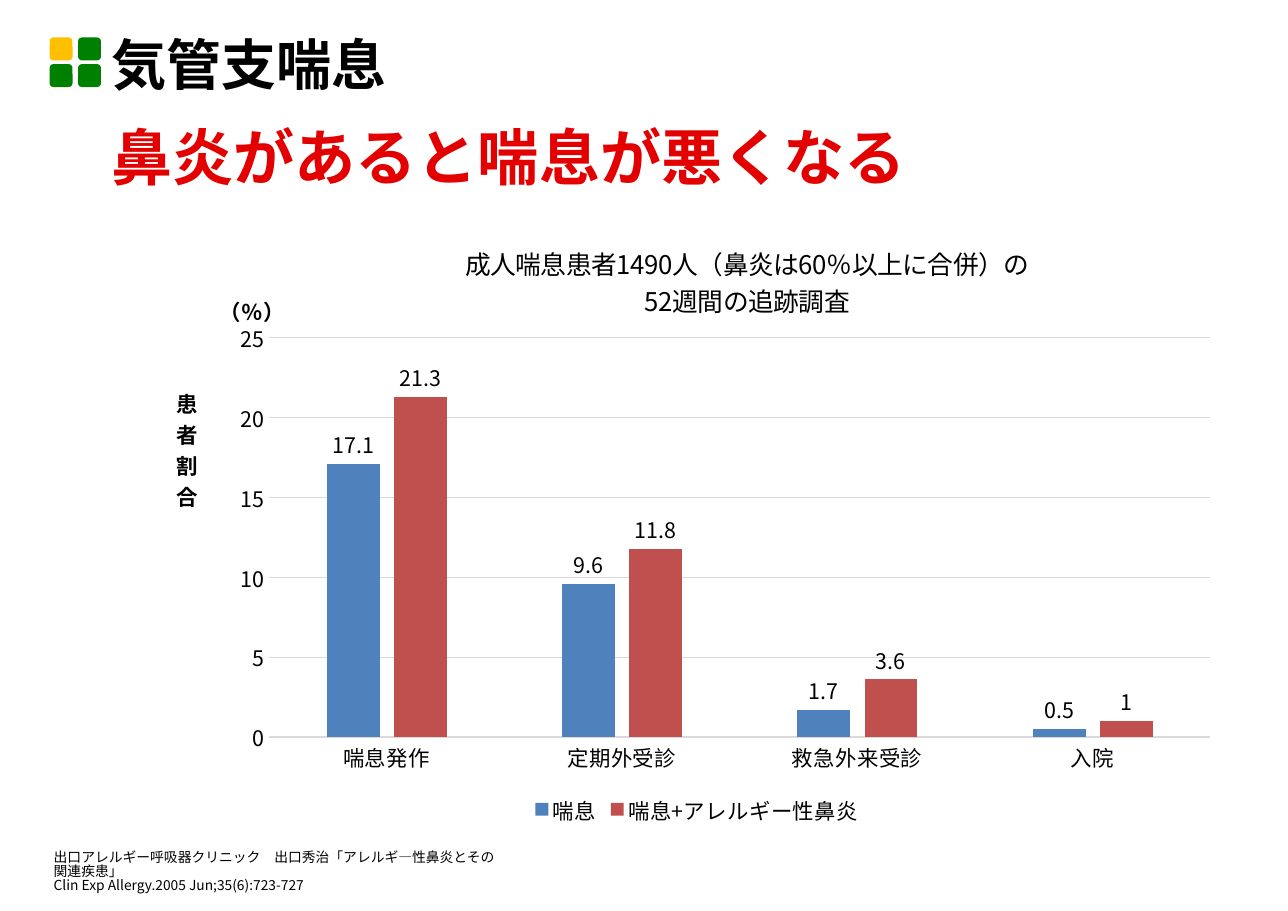
from lxml.etree import SubElement
from pptx import Presentation
from pptx.chart.data import CategoryChartData
from pptx.dml.color import RGBColor
from pptx.enum.chart import XL_CHART_TYPE, XL_LABEL_POSITION, XL_LEGEND_POSITION, XL_TICK_MARK
from pptx.enum.shapes import MSO_SHAPE
from pptx.enum.text import MSO_ANCHOR
from pptx.oxml import parse_xml
from pptx.oxml.ns import nsdecls, qn
from pptx.util import Pt

BLACK = RGBColor(0x00, 0x00, 0x00)
RED = RGBColor(0xE2, 0x00, 0x00)
AMBER = RGBColor(0xFF, 0xC0, 0x00)
GREEN = RGBColor(0x00, 0x80, 0x00)
GRID_GREY = RGBColor(0xD9, 0xD9, 0xD9)
ASTHMA_BLUE = RGBColor(0x4F, 0x81, 0xBD)
RHINITIS_RED = RGBColor(0xC0, 0x50, 0x4D)
SANS = "Noto Sans CJK JP"
LATIN = "Calibri"

CATEGORIES = ["喘息発作", "定期外受診", "救急外来受診", "入院"]
SERIES = [
    ("喘息", (17.1, 9.6, 1.7, 0.5), ASTHMA_BLUE),
    ("喘息+アレルギー性鼻炎", (21.3, 11.8, 3.6, 1), RHINITIS_RED),
]
CHART_TITLE = "成人喘息患者1490人（鼻炎は60％以上に合併）の\n52週間の追跡調査"
SOURCES = (
    "出口アレルギー呼吸器クリニック\u3000出口秀治「アレルギ―性鼻炎とその関連疾患」\n"
    "Clin Exp Allergy.2005 Jun;35(6):723-727"
)


def style_text(frame, size, color=BLACK, bold=False, name=SANS):
    """Format every run, with the Japanese face set for East Asian text."""
    for para in frame.paragraphs:
        for span in para.runs:
            font = span.font
            font.size, font.bold, font.name = Pt(size), bold, name
            font.color.rgb = color
            SubElement(font._element, qn("a:ea"), typeface=SANS)


def add_text(page, box, text, size, spacing, anchor=MSO_ANCHOR.TOP, **style):
    frame = page.shapes.add_textbox(*map(Pt, box)).text_frame
    frame.word_wrap = True
    frame.vertical_anchor = anchor
    frame.text = text
    for para in frame.paragraphs:
        para.line_spacing = spacing
    style_text(frame, size, **style)


def add_tiles(page, box):
    """Four rounded tiles in a two by two grid, the first one amber."""
    left, top, width, height = box
    side = 15
    for index in range(4):
        row, column = divmod(index, 2)
        tile = page.shapes.add_shape(
            MSO_SHAPE.ROUNDED_RECTANGLE,
            Pt(left + column * (width - side)), Pt(top + row * (height - side)),
            Pt(side), Pt(side))
        tile.shadow.inherit = False
        tile.fill.solid()
        tile.fill.fore_color.rgb = GREEN if index else AMBER
        tile.line.fill.background()


def set_layout(element, position, **fractions):
    """Give a chart part a manual place, as fractions of the chart."""
    for old in element.findall(qn("c:layout")):
        element.remove(old)
    layout = parse_xml(f"<c:layout {nsdecls('c')}><c:manualLayout/></c:layout>")
    for tag, value in fractions.items():
        SubElement(layout[0], qn(f"c:{tag}"), val=str(value))
    element.insert(position, layout)


def place_title(title, text, size, left, top, bold=False):
    title.text_frame.text = text
    style_text(title.text_frame, size, bold=bold)
    set_layout(title.element, 1, xMode="edge", yMode="edge", x=left, y=top)


def format_axes(chart):
    category, value = chart.category_axis, chart.value_axis
    for axis in (category, value):
        axis.major_tick_mark = axis.minor_tick_mark = XL_TICK_MARK.NONE
    category.format.line.color.rgb = GRID_GREY
    category.format.line.width = Pt(0.78)
    value.minimum_scale, value.maximum_scale, value.major_unit = 0, 25, 5
    value.format.line.fill.background()
    grid = value.major_gridlines.format.line
    grid.color.rgb = GRID_GREY
    grid.width = Pt(0.78)
    place_title(category.axis_title, "（％）", 14, 0.05, 0.12, bold=True)
    place_title(value.axis_title, "患者割合", 14, 0.01, 0.27, bold=True)
    for axis, direction in ((category, "horz"), (value, "wordArtVertRtl")):
        body = axis.axis_title.text_frame._txBody.bodyPr
        body.set("rot", "0")
        body.set("vert", direction)


def add_patient_chart(page, box):
    data = CategoryChartData()
    data.categories = CATEGORIES
    for name, values, _ in SERIES:
        data.add_series(name, values)
    chart = page.shapes.add_chart(
        XL_CHART_TYPE.COLUMN_CLUSTERED, *map(Pt, box), data).chart
    chart.font.size, chart.font.name = Pt(14), SANS
    chart.font.color.rgb = BLACK
    plot = chart.plots[0]
    plot.gap_width, plot.overlap = 219, -27
    plot.vary_by_categories = False
    for series, (_, _, color) in zip(plot.series, SERIES):
        series.format.fill.solid()
        series.format.fill.fore_color.rgb = color
        labels = series.data_labels
        labels.show_value = True
        labels.position = XL_LABEL_POSITION.OUTSIDE_END
    format_axes(chart)
    chart.has_title = True
    place_title(chart.chart_title, CHART_TITLE, 16.8, 0.28, 0.04)
    chart.has_legend = True
    chart.legend.position = XL_LEGEND_POSITION.BOTTOM
    chart.legend.include_in_layout = False
    set_layout(chart.element.find(".//" + qn("c:plotArea")), 0,
               layoutTarget="inner", xMode="edge", yMode="edge",
               x=0.1, y=0.2, w=0.88, h=0.65)


def build_slide(page):
    add_text(page, (65.5, 80, 655, 60.5), "鼻炎があると喘息が悪くなる", 40, 0.9,
             color=RED, bold=True, name=LATIN)
    add_tiles(page, (32.4, 24.5, 33.6, 32.4))
    add_text(page, (65.5, 19.5, 714, 49), "気管支喘息", 36, 0.9,
             anchor=MSO_ANCHOR.MIDDLE, bold=True)
    add_text(page, (28, 553, 303, 40), SOURCES, 9, 0.85)
    add_patient_chart(page, (106, 140.5, 699, 401.5))


def main():
    deck = Presentation()
    deck.slide_width, deck.slide_height = Pt(841.68), Pt(595.44)
    build_slide(deck.slides.add_slide(deck.slide_layouts[6]))
    deck.save("out.pptx")


if __name__ == "__main__":
    main()
